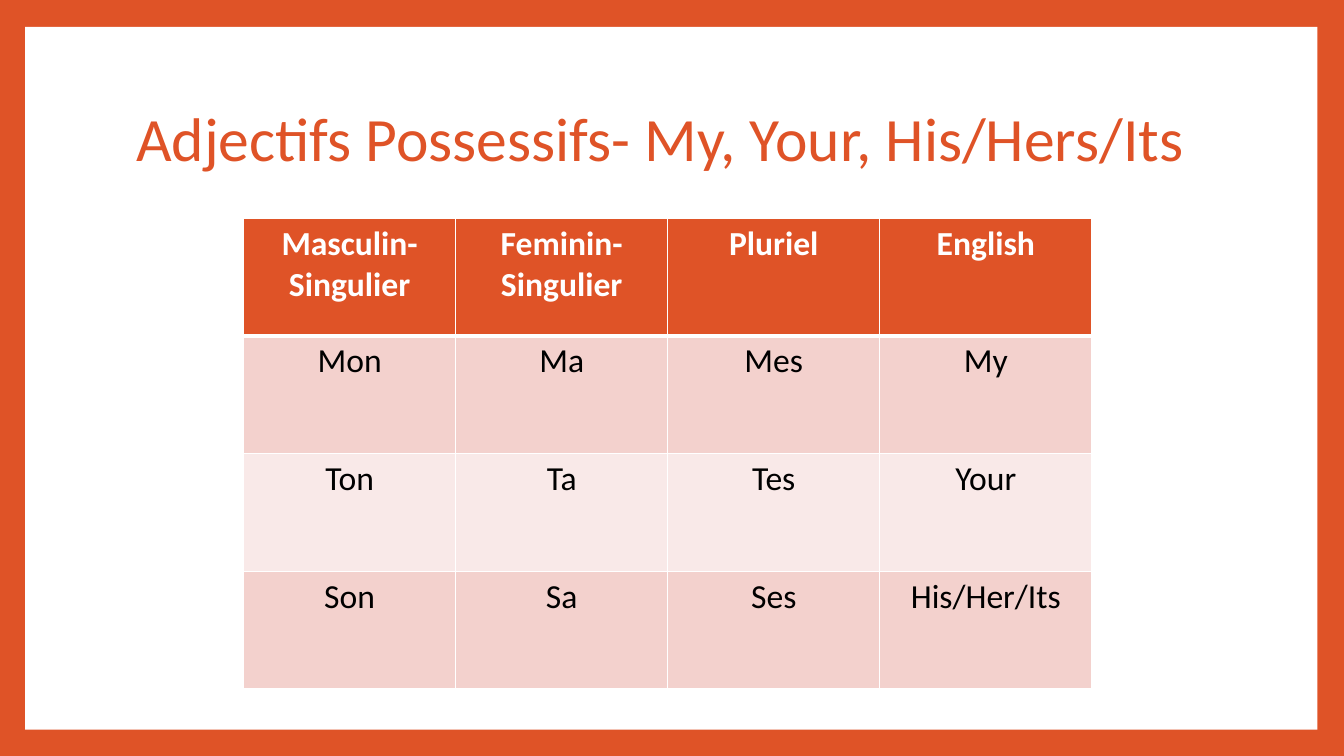
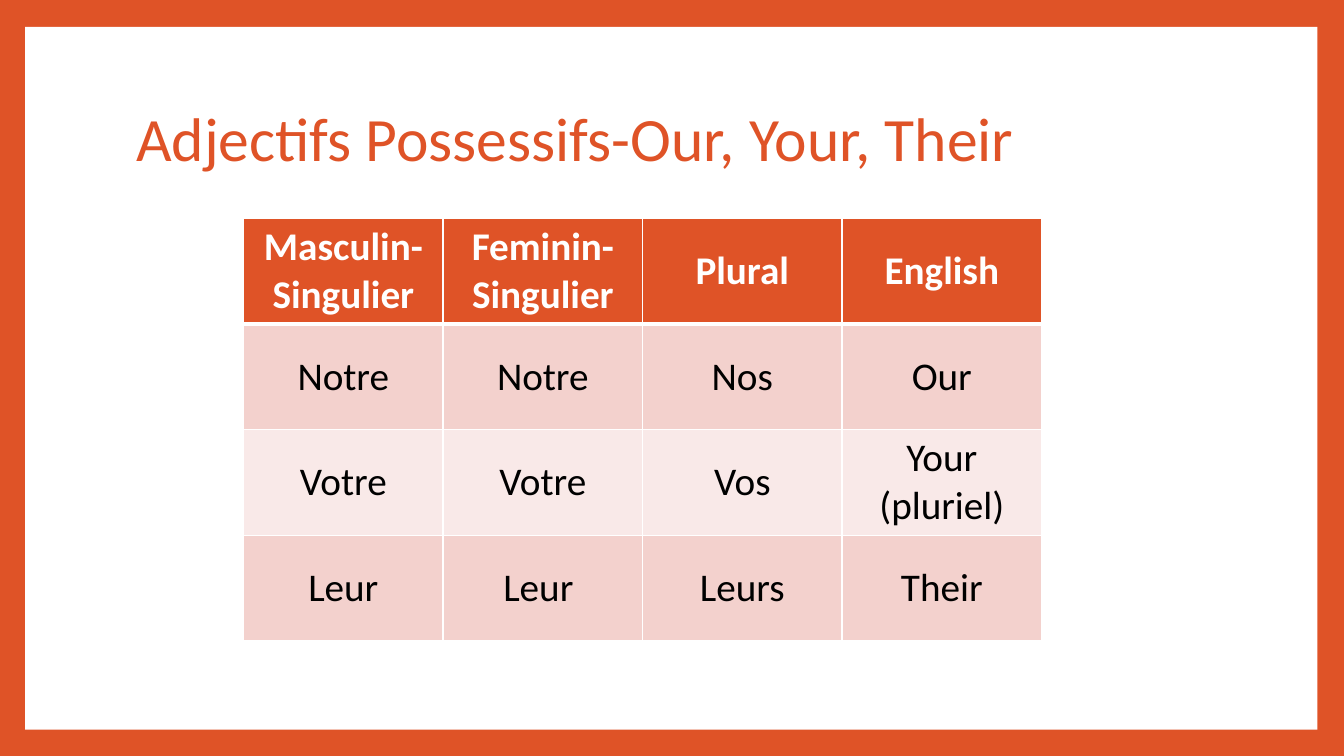
from lxml.etree import SubElement
from pptx import Presentation
from pptx.dml.color import RGBColor
from pptx.enum.shapes import MSO_SHAPE as Shape
from pptx.enum.text import MSO_ANCHOR as Anchor, PP_ALIGN as Align
from pptx.oxml.ns import qn
from pptx.util import Pt

ORANGE = RGBColor(0xDF, 0x53, 0x27)
WHITE = RGBColor(0xFF, 0xFF, 0xFF)
BLACK = RGBColor(0, 0, 0)
ROSE = RGBColor(0xF3, 0xD1, 0xCD)
PALE = RGBColor(0xF9, 0xE9, 0xE8)
FONT = "Calibri"

SIZE = 960, 540
PANEL = 18, 19.2, 923, 502
TITLE = 90, 48, 777.6, 106.6
CORNER = 174, 156

SLIDES = [
    dict(
        title="Adjectifs Possessifs- My, Your, His/Hers/Its",
        width=606, height=336, size=24, anchor=Anchor.TOP,
        rows=[
            ("Masculin- Singulier", "Feminin-Singulier", "Pluriel", "English"),
            ("Mon", "Ma", "Mes", "My"),
            ("Ton", "Ta", "Tes", "Your"),
            ("Son", "Sa", "Ses", "His/Her/Its"),
        ],
    ),
    dict(
        title="Adjectifs Possessifs-Our, Your, Their",
        width=570, height=300, size=28, anchor=Anchor.MIDDLE,
        rows=[
            ("Masculin- Singulier", "Feminin- Singulier", "Plural", "English"),
            ("Notre", "Notre", "Nos", "Our"),
            ("Votre", "Votre", "Vos", "Your (pluriel)"),
            ("Leur", "Leur ", "Leurs", "Their"),
        ],
    ),
]


def pts(*nums):
    return [Pt(n) for n in nums]


def style(par, size, color, bold=False):
    font = par.runs[0].font
    font.name, font.size, font.bold = FONT, Pt(size), bold
    font.color.rgb = color


def set_up(deck, layout):
    """Give the layout its orange frame, white panel and title place."""
    fill = layout.background.fill
    fill.solid()
    fill.fore_color.rgb = ORANGE
    for holder in list(layout.placeholders):
        if holder.placeholder_format.idx:
            holder.element.getparent().remove(holder.element)
        else:
            holder.left, holder.top, holder.width, holder.height = pts(*TITLE)
    # Layouts cannot add shapes, so the panel is made on a slide and moved.
    panel = deck.slides[0].shapes.add_shape(Shape.RECTANGLE, *pts(*PANEL))
    panel.shadow.inherit = False
    panel.fill.solid()
    panel.fill.fore_color.rgb = WHITE
    panel.line.fill.background()
    layout.shapes.element.insert(2, panel.element)


def add_borders(cell, row):
    widths = dict(L=1, R=1, T=3 if row == 1 else 1, B=3 if row == 0 else 1)
    props = cell._tc.get_or_add_tcPr()
    for side, width in widths.items():
        line = SubElement(props, qn("a:ln" + side), w=str(Pt(width)))
        fill = SubElement(line, qn("a:solidFill"))
        SubElement(fill, qn("a:srgbClr"), val=str(WHITE))


def fill_cell(cell, text, row, size, anchor):
    head = row == 0
    add_borders(cell, row)
    cell.fill.solid()
    cell.fill.fore_color.rgb = ORANGE if head else ROSE if row % 2 else PALE
    cell.vertical_anchor = anchor
    cell.text_frame.text = text
    par = cell.text_frame.paragraphs[0]
    par.alignment = Align.CENTER
    style(par, size, WHITE if head else BLACK, head)


def add_grid(slide, rows, width, height, size, anchor):
    place = pts(*CORNER, width, height)
    grid = slide.shapes.add_table(len(rows), len(rows[0]), *place).table
    for r, row in enumerate(rows):
        for c, text in enumerate(row):
            fill_cell(grid.cell(r, c), text, r, size, anchor)


def add_title(slide, text):
    frame = slide.shapes.title.text_frame
    frame.text = text
    frame.vertical_anchor = Anchor.MIDDLE
    par = frame.paragraphs[0]
    par.alignment = Align.LEFT
    par.line_spacing = 0.9
    style(par, 44, ORANGE)


def main():
    deck = Presentation()
    deck.slide_width, deck.slide_height = pts(*SIZE)
    layout = deck.slide_layouts.get_by_name("Title Only")
    for data in SLIDES:
        slide = deck.slides.add_slide(layout)
        table = dict(data)
        add_title(slide, table.pop("title"))
        add_grid(slide, **table)
    set_up(deck, layout)
    deck.save("out.pptx")


if __name__ == "__main__":
    main()
